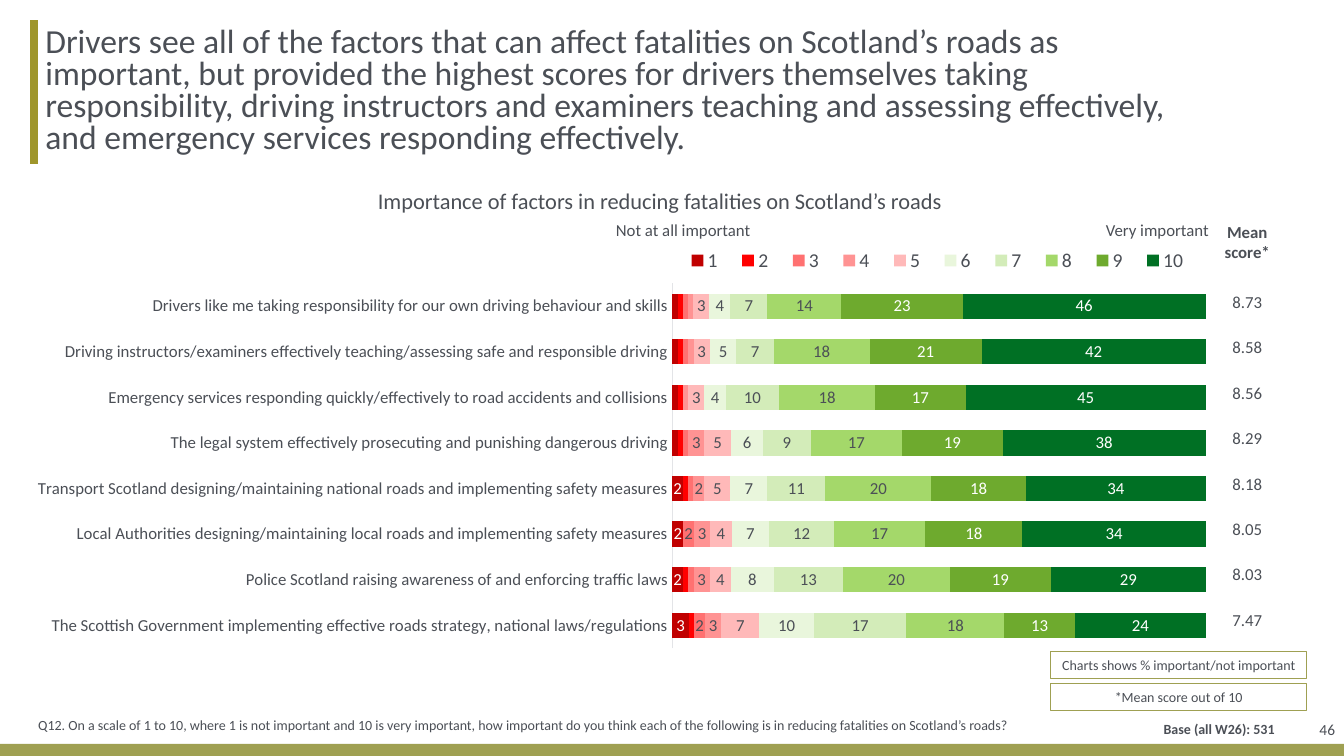
from lxml.etree import SubElement
from pptx import Presentation
from pptx.chart.data import CategoryChartData
from pptx.dml.color import RGBColor
from pptx.enum.chart import XL_CHART_TYPE, XL_LEGEND_POSITION, XL_TICK_MARK
from pptx.enum.shapes import MSO_CONNECTOR, MSO_SHAPE
from pptx.enum.text import MSO_ANCHOR, PP_ALIGN
from pptx.oxml import parse_xml
from pptx.oxml.ns import nsdecls, qn
from pptx.util import Inches, Pt

FONT = "Calibri"
TEXT, WHITE, OLIVE, GOLD, AXIS = "4B4F56", "FFFFFF", "9FA052", "9F962B", "E3E4E7"

TITLE = (
    "Drivers see all of the factors that can affect fatalities on Scotland’s roads as important, "
    "but provided the highest scores for drivers themselves taking responsibility, driving "
    "instructors and examiners teaching and assessing effectively, and emergency services "
    "responding effectively."
)
QUESTION = (
    "Q12. On a scale of 1 to 10, where 1 is not important and 10 is very important, how important "
    "do you think each of the following is in reducing fatalities on Scotland’s roads?"
)
MEAN_HEADING = "Mean score*"
# Factor, percentage giving each score from 1 to 10, mean score
FACTORS = [
    ("Drivers like me taking responsibility for our own driving behaviour and skills",
     (1, 1, 1, 1, 3, 4, 7, 14, 23, 46), "8.73"),
    ("Driving instructors/examiners effectively teaching/assessing safe and responsible driving",
     (1, 1, 1, 1, 3, 5, 7, 18, 21, 42), "8.58"),
    ("Emergency services responding quickly/effectively to road accidents and collisions",
     (1, 1, None, 1, 3, 4, 10, 18, 17, 45), "8.56"),
    ("The legal system effectively prosecuting and punishing dangerous driving",
     (1, 1, 1, 3, 5, 6, 9, 17, 19, 38), "8.29"),
    ("Transport Scotland designing/maintaining national roads and implementing safety measures",
     (2, 1, 1, 2, 5, 7, 11, 20, 18, 34), "8.18"),
    ("Local Authorities designing/maintaining local roads and implementing safety measures",
     (2, None, 2, 3, 4, 7, 12, 17, 18, 34), "8.05"),
    ("Police Scotland raising awareness of and enforcing traffic laws",
     (2, 1, 1, 3, 4, 8, 13, 20, 19, 29), "8.03"),
    ("The Scottish Government implementing effective roads strategy, national laws/regulations",
     (3, 1, 2, 3, 7, 10, 17, 18, 13, 24), "7.47"),
]
# Bar colour and label colour for each score from 1 to 10
SCORE_COLOURS = [
    ("C00000", WHITE), ("FF0000", WHITE), ("FF7171", TEXT), ("FF9393", TEXT), ("FFB9B9", TEXT),
    ("E9F6DC", TEXT), ("D3ECB9", TEXT), ("A4D86A", TEXT), ("6EAA2E", WHITE), ("007024", WHITE),
]
SMALLEST_LABEL = 2
# Text, position, size, bold, alignment, anchor, wrap
LABELS = [
    ("46", (12.42, 6.95, 0.92, 0.58), 11, False, PP_ALIGN.RIGHT, MSO_ANCHOR.MIDDLE, True),
    ("Base (all W26): 531", (10.87, 7.08, 1.87, 0.3), 10, True,
     PP_ALIGN.RIGHT, MSO_ANCHOR.MIDDLE, True),
    (QUESTION, (0.28, 7.06, 9.98, 0.27), 10, False, PP_ALIGN.LEFT, MSO_ANCHOR.MIDDLE, True),
    ("Not at all important", (6.01, 2.13, 1.55, 0.3), 12, False,
     PP_ALIGN.LEFT, MSO_ANCHOR.TOP, False),
    ("Very important", (10.87, 2.13, 1.23, 0.3), 12, False,
     PP_ALIGN.LEFT, MSO_ANCHOR.TOP, False),
    ("Importance of factors in reducing fatalities on Scotland’s roads",
     (3.65, 1.81, 5.86, 0.37), 16, False, PP_ALIGN.LEFT, MSO_ANCHOR.TOP, False),
]
NOTES = [("Charts shows % important/not important", 6.46), ("*Mean score out of 10", 6.78)]


def colour(value):
    return RGBColor.from_string(value)


def style_font(font, size, value=TEXT, bold=False):
    font.name, font.size, font.bold = FONT, Pt(size), bold
    font.color.rgb = colour(value)


def write(frame, text, size, bold=False, align=PP_ALIGN.LEFT, anchor=MSO_ANCHOR.TOP, wrap=True):
    frame.text = text
    frame.word_wrap = wrap
    frame.vertical_anchor = anchor
    para = frame.paragraphs[0]
    para.alignment = align
    style_font(para.runs[0].font, size, bold=bold)
    return para


def add_box(slide, place, fill=None, line=None):
    """Add a plain rectangle with an optional fill and outline."""
    box = slide.shapes.add_shape(MSO_SHAPE.RECTANGLE, *map(Inches, place))
    box.shadow.inherit = False
    for part, value in ((box.fill, fill), (box.line.fill, line)):
        if value:
            part.solid()
            part.fore_color.rgb = colour(value)
        else:
            part.background()
    if line:
        box.line.width = Pt(0.75)
    return box


def manual_layout(left, top, width, height, target=""):
    """Return a chart layout given as fractions of the chart area."""
    inner = f'<c:layoutTarget val="{target}"/>' if target else ""
    return parse_xml(
        f'<c:layout {nsdecls("c")}><c:manualLayout>{inner}'
        f'<c:xMode val="edge"/><c:yMode val="edge"/><c:x val="{left}"/><c:y val="{top}"/>'
        f'<c:w val="{width}"/><c:h val="{height}"/></c:manualLayout></c:layout>')


def label_series(series, label_colour):
    """Show the values of a series, leaving out those too small to read."""
    labels = series.data_labels
    labels.show_value = True
    labels.number_format, labels.number_format_is_linked = "0", False
    style_font(labels.font, 12, label_colour)
    small = [i for i, value in enumerate(series.values) if (value or 0) < SMALLEST_LABEL]
    for index in reversed(small):
        labels._element.insert(0, parse_xml(
            f'<c:dLbl {nsdecls("c")}><c:idx val="{index}"/><c:delete val="1"/></c:dLbl>'))


def add_factor_chart(slide):
    rows = FACTORS[::-1]
    data = CategoryChartData(number_format="0")
    data.categories = [name for name, _, _ in rows]
    for index in range(len(SCORE_COLOURS)):
        data.add_series(str(index + 1), [scores[index] for _, scores, _ in rows])
    place = map(Inches, (-0.91, 2.28, 13.09, 4.36))
    chart = slide.shapes.add_chart(XL_CHART_TYPE.BAR_STACKED_100, *place, data).chart
    chart.has_title = False
    style_font(chart.font, 10)

    plot = chart.plots[0]
    plot.gap_width, plot.overlap, plot.vary_by_categories = 80, 100, False
    for series, (fill, label_colour) in zip(plot.series, SCORE_COLOURS):
        series.format.fill.solid()
        series.format.fill.fore_color.rgb = colour(fill)
        label_series(series, label_colour)

    axis = chart.category_axis
    axis.major_tick_mark = axis.minor_tick_mark = XL_TICK_MARK.NONE
    axis.format.line.color.rgb = colour(AXIS)
    axis.format.line.width = Pt(0.75)
    style_font(axis.tick_labels.font, 12)
    chart.value_axis.has_major_gridlines = False
    chart.value_axis.visible = False

    chart.has_legend = True
    legend = chart.legend
    legend.position = XL_LEGEND_POSITION.TOP
    legend.include_in_layout = False
    style_font(legend.font, 14)
    legend._element.find(qn("c:legendPos")).addnext(manual_layout(0.58, 0.03, 0.4, 0.08))
    area = chart._chartSpace.chart.plotArea
    for layout in area.findall(qn("c:layout")):
        area.remove(layout)
    area.insert(0, manual_layout(0.579, 0.122, 0.404, 0.83, "inner"))


def add_mean_table(slide):
    texts = [MEAN_HEADING] + [mean for _, _, mean in FACTORS]
    place = map(Inches, (12.02, 2.02, 0.7, 4.36))
    table = slide.shapes.add_table(len(texts), 1, *place).table
    table.first_row = table.horz_banding = False
    for index, text in enumerate(texts):
        table.rows[index].height = Inches(0.45 if index else 0.74)
        cell = table.cell(index, 0)
        cell.fill.background()
        cell.margin_top, cell.margin_bottom = Inches(0.04), 0
        cell.vertical_anchor = MSO_ANCHOR.MIDDLE
        para = cell.text_frame.paragraphs[0]
        para.text = text
        para.alignment = PP_ALIGN.CENTER
        style_font(para.runs[0].font, 12, bold=index == 0)


def main():
    deck = Presentation()
    deck.slide_width, deck.slide_height = Inches(13.33), Inches(7.5)
    slide = deck.slides.add_slide(deck.slide_layouts[6])

    add_box(slide, (0, 7.38, 13.33, 0.12), fill=OLIVE)
    rule = slide.shapes.add_connector(
        MSO_CONNECTOR.STRAIGHT, *map(Inches, (0.34, 0.2, 0.34, 1.63)))
    rule.line.color.rgb = colour(GOLD)
    rule.line.width = Pt(6)
    SubElement(rule._element.spPr, qn("a:effectLst"))

    title = slide.shapes.add_textbox(*map(Inches, (0.37, 0.2, 11.65, 1.42))).text_frame
    title.margin_left = Inches(0.08)
    title.margin_top = title.margin_right = title.margin_bottom = 0
    write(title, TITLE, 24, anchor=MSO_ANCHOR.MIDDLE).line_spacing = 0.8

    add_factor_chart(slide)
    add_mean_table(slide)
    for text, place, *style in LABELS:
        write(slide.shapes.add_textbox(*map(Inches, place)).text_frame, text, *style)
    for text, top in NOTES:
        box = add_box(slide, (10.42, top, 2.54, 0.27), line=OLIVE)
        write(box.text_frame, text, 10, align=PP_ALIGN.CENTER)
    deck.save("out.pptx")


if __name__ == "__main__":
    main()
